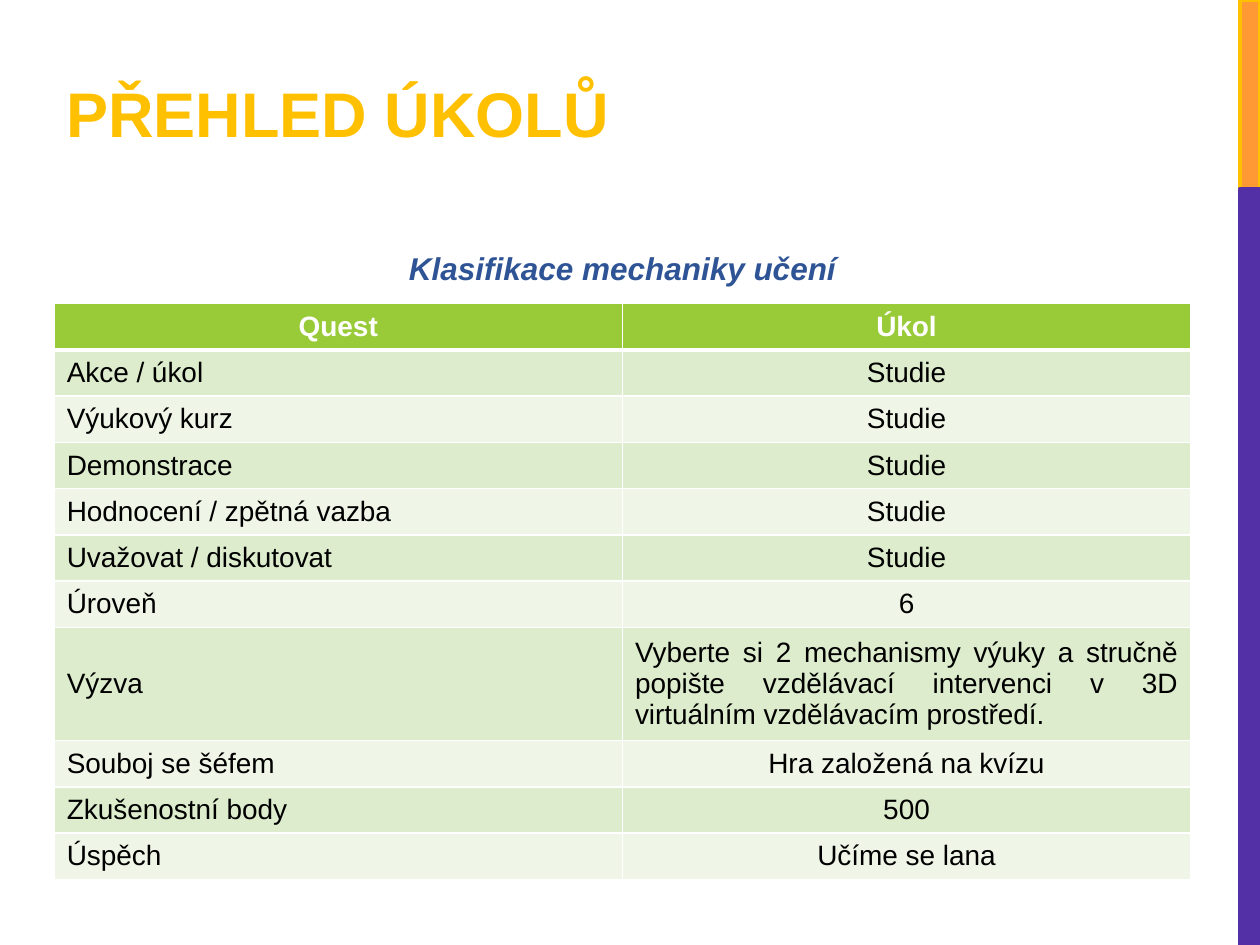
from lxml import etree
from pptx import Presentation
from pptx.dml.color import RGBColor
from pptx.enum.shapes import MSO_SHAPE
from pptx.enum.text import MSO_ANCHOR, PP_ALIGN
from pptx.oxml.ns import qn
from pptx.util import Inches, Pt

RECTANGLE = MSO_SHAPE.RECTANGLE
TOP, MIDDLE, BOTTOM = MSO_ANCHOR.TOP, MSO_ANCHOR.MIDDLE, MSO_ANCHOR.BOTTOM
LEFT, CENTER, JUSTIFY = PP_ALIGN.LEFT, PP_ALIGN.CENTER, PP_ALIGN.JUSTIFY

WHITE = RGBColor(0xFF, 0xFF, 0xFF)
BLACK = RGBColor(0x00, 0x00, 0x00)
GOLD = RGBColor(0xFF, 0xC0, 0x00)
ORANGE = RGBColor(0xFF, 0x99, 0x33)
PURPLE = RGBColor(0x53, 0x30, 0xA5)
BLUE = RGBColor(0x2F, 0x54, 0x96)
GREEN = RGBColor(0x99, 0xCB, 0x38)
BANDS = (RGBColor(0xDD, 0xEC, 0xCC), RGBColor(0xEF, 0xF6, 0xE7))

HEADER = ("Quest", "Úkol")
CHALLENGE = "Výzva"
TASKS = (
    ("Akce / úkol", "Studie"),
    ("Výukový kurz", "Studie"),
    ("Demonstrace", "Studie"),
    ("Hodnocení / zpětná vazba", "Studie"),
    ("Uvažovat / diskutovat", "Studie"),
    ("Úroveň", "6"),
    (CHALLENGE, "Vyberte si 2 mechanismy výuky a stručně popište vzdělávací "
                "intervenci v 3D virtuálním vzdělávacím prostředí."),
    ("Souboj se šéfem", "Hra založená na kvízu"),
    ("Zkušenostní body", "500"),
    ("Úspěch", "Učíme se lana"),
)


class SlideBuilder:
    font_name = "Arial"
    grid_unit = 0.1

    def __init__(self, slide):
        self.slide = slide

    def units(self, *counts):
        return [Inches(count * self.grid_unit) for count in counts]

    def style(self, para, size, color, align, bold=False, italic=False):
        para.alignment = align
        for span in para.runs:
            font = span.font
            font.name, font.size = self.font_name, Pt(size)
            font.bold, font.italic = bold, italic
            font.color.rgb = color

    def bar(self, area, fill, line):
        shape = self.slide.shapes.add_shape(RECTANGLE, *self.units(*area))
        shape.shadow.inherit = False
        shape.fill.solid()
        shape.fill.fore_color.rgb = fill
        shape.line.color.rgb = line
        shape.line.width = Pt(2.25)

    def text(self, area, wording, size, color, align, anchor=TOP, spacing=1.0, italic=False):
        frame = self.slide.shapes.add_textbox(*self.units(*area)).text_frame
        frame.word_wrap = True
        frame.vertical_anchor = anchor
        para = frame.paragraphs[0]
        para.text = wording
        para.line_spacing = spacing
        self.style(para, size, color, align, bold=True, italic=italic)

    def border(self, cell, side, width):
        properties = cell._tc.get_or_add_tcPr()
        line = etree.SubElement(properties, qn(f"a:ln{side}"), w=str(Pt(width)))
        fill = etree.SubElement(line, qn("a:solidFill"))
        etree.SubElement(fill, qn("a:srgbClr"), val=str(WHITE))

    def cell(self, cell, wording, fill, color, align, bold, top, bottom):
        for side, width in (("L", 1), ("R", 1), ("T", top), ("B", bottom)):
            self.border(cell, side, width)
        cell.fill.solid()
        cell.fill.fore_color.rgb = fill
        cell.vertical_anchor = MIDDLE
        para = cell.text_frame.paragraphs[0]
        para.text = wording
        self.style(para, 16, color, align, bold=bold)

    def table(self, area, header, records, tall_label, tall_height):
        rows = (header, *records)
        table = self.slide.shapes.add_table(len(rows), len(header), *self.units(*area)).table
        plain_height = (area[3] - tall_height) / len(records)
        for index, record in enumerate(rows):
            is_header, is_tall = index == 0, record[0] == tall_label
            table.rows[index].height = self.units(tall_height if is_tall else plain_height)[0]
            fill = GREEN if is_header else BANDS[(index - 1) % 2]
            value_align = JUSTIFY if is_tall else CENTER
            aligns = (CENTER if is_header else LEFT, value_align)
            for column, (wording, align) in enumerate(zip(record, aligns)):
                self.cell(table.cell(index, column), wording, fill,
                          WHITE if is_header else BLACK, align, is_header,
                          top=3 if index == 1 else 1, bottom=3 if is_header else 1)


def main():
    deck = Presentation()
    deck.slide_width, deck.slide_height = Inches(10), Inches(7.5)
    page = SlideBuilder(deck.slides.add_slide(deck.slide_layouts[6]))
    page.bar((98.4, 0, 1.6, 15), ORANGE, GOLD)
    page.bar((98.4, 15, 1.6, 60), PURPLE, PURPLE)
    page.text((4.3, 3.5, 63.3, 8.9), "PŘEHLED ÚKOLŮ", 36, GOLD, LEFT, anchor=BOTTOM)
    page.text((4.3, 17.8, 90.2, 5.1), "Klasifikace mechaniky učení", 18, BLUE, CENTER,
              spacing=1.5, italic=True)
    page.table((4.3, 24.1, 90.2, 45.7), HEADER, TASKS, CHALLENGE, 9)
    deck.save("out.pptx")


if __name__ == "__main__":
    main()
